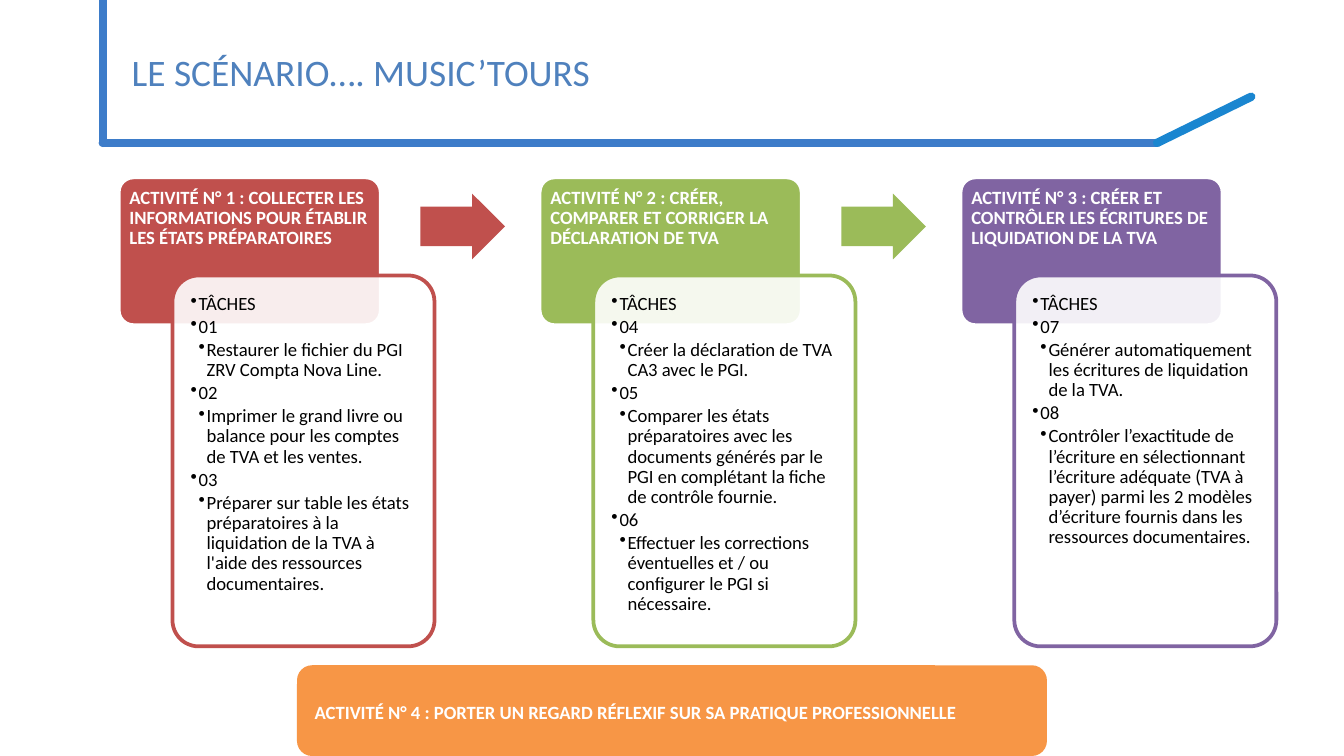
from lxml.etree import SubElement
from pptx import Presentation
from pptx.dml.color import RGBColor
from pptx.enum.shapes import MSO_CONNECTOR as Connector, MSO_SHAPE as Shape
from pptx.enum.text import MSO_ANCHOR as Anchor, MSO_AUTO_SIZE as AutoSize, PP_ALIGN as Align
from pptx.oxml.ns import qn
from pptx.util import Inches, Pt

WHITE = RGBColor(0xFF, 0xFF, 0xFF)
BLACK = RGBColor(0x00, 0x00, 0x00)
TITLE_BLUE = RGBColor(0x4F, 0x81, 0xBD)
FRAME_BLUE = RGBColor(0x3D, 0x7C, 0xC9)
TIP_BLUE = RGBColor(0x1A, 0x86, 0xD0)
RED = RGBColor(0xC0, 0x50, 0x4D)
GREEN = RGBColor(0x9B, 0xBB, 0x59)
PURPLE = RGBColor(0x80, 0x64, 0xA2)
ORANGE = RGBColor(0xF7, 0x96, 0x46)

COLUMNS, ROWS = 100, 56.25
FIRST_COLUMN, COLUMN_STEP = 8.83, 31.32

ACTIVITIES = [
    (RED, "COLLECTER LES INFORMATIONS POUR ÉTABLIR LES ÉTATS PRÉPARATOIRES", [
        ("01", "Restaurer le fichier du PGI ZRV Compta Nova Line."),
        ("02", "Imprimer le grand livre ou balance pour les comptes de TVA et les ventes."),
        ("03", "Préparer sur table les états préparatoires à la liquidation de la TVA "
               "à l'aide des ressources documentaires."),
    ]),
    (GREEN, "CRÉER, COMPARER ET CORRIGER LA DÉCLARATION DE TVA", [
        ("04", "Créer la déclaration de TVA CA3 avec le PGI."),
        ("05", "Comparer les états préparatoires avec les documents générés par le PGI "
               "en complétant la fiche de contrôle fournie."),
        ("06", "Effectuer les corrections éventuelles et / ou configurer le PGI si nécessaire."),
    ]),
    (PURPLE, "CRÉER ET CONTRÔLER LES ÉCRITURES DE LIQUIDATION DE LA TVA", [
        ("07", "Générer automatiquement les écritures de liquidation de la TVA."),
        ("08", "Contrôler l’exactitude de l’écriture en sélectionnant l’écriture adéquate "
               "(TVA à payer) parmi les 2 modèles d’écriture fournis dans les ressources "
               "documentaires."),
    ]),
]


class SlideBuilder:
    font_name = "Calibri"
    text_size = 10
    inset = 0.08

    def __init__(self, deck):
        self.column = deck.slide_width / COLUMNS
        self.row = deck.slide_height / ROWS
        self.slide = deck.slides.add_slide(deck.slide_layouts[5])

    def place(self, left, top, width, height):
        return (round(left * self.column), round(top * self.row),
                round(width * self.column), round(height * self.row))

    def style(self, para, color, size=text_size, bold=False):
        para.alignment = Align.LEFT
        for span in para.runs:
            span.font.name = self.font_name
            span.font.size = Pt(size)
            span.font.bold = bold
            span.font.color.rgb = color

    def title(self, text, *area):
        box = self.slide.shapes.title
        box.left, box.top, box.width, box.height = self.place(*area)
        frame = box.text_frame
        frame.text = text
        frame.auto_size = AutoSize.NONE
        frame.vertical_anchor = Anchor.MIDDLE
        self.style(frame.paragraphs[0], TITLE_BLUE, 20)

    def line(self, start, end, color):
        x1, y1, x2, y2 = self.place(*start, *end)
        connector = self.slide.shapes.add_connector(Connector.STRAIGHT, x1, y1, x2, y2)
        connector.line.color.rgb = color
        connector.line.width = Pt(4.5)
        properties = connector._element.spPr
        properties.find(qn("a:ln")).set("cap", "rnd")
        SubElement(properties, qn("a:effectLst"))

    def shape(self, kind, area, fill, outline=None, adjustments=(), opacity=100):
        shape = self.slide.shapes.add_shape(kind, *self.place(*area))
        shape.shadow.inherit = False
        for index, value in enumerate(adjustments):
            shape.adjustments[index] = value
        shape.fill.solid()
        shape.fill.fore_color.rgb = fill
        if opacity < 100:
            color = shape._element.spPr.find(qn("a:solidFill"))[0]
            SubElement(color, qn("a:alpha")).set("val", str(opacity * 1000))
        if outline is None:
            shape.line.fill.background()
        else:
            shape.line.color.rgb = outline
            shape.line.width = Pt(2)
        return shape

    def text(self, area):
        frame = self.slide.shapes.add_textbox(*self.place(*area)).text_frame
        frame.word_wrap = True
        frame.margin_left = frame.margin_right = Inches(self.inset)
        frame.margin_top = frame.margin_bottom = Inches(self.inset)
        return frame

    def heading(self, frame, text, spacing=0.9):
        frame.text = text
        para = frame.paragraphs[0]
        para.line_spacing = spacing
        self.style(para, WHITE, bold=True)

    def bullets(self, area, items):
        frame = self.text(area)
        frame.text = "\n".join(text for _, text in items)
        for para, (level, _) in zip(frame.paragraphs, items):
            para.level = level
            para.line_spacing = 0.9
            para.space_after = Pt(1.5)
            self.style(para, BLACK)
            properties = para._p.get_or_add_pPr()
            properties.set("marL", str(Inches(0.06 * level)))
            properties.set("indent", str(Inches(-0.06)))
            SubElement(properties, qn("a:buChar")).set("char", "•")

    def activity(self, left, number, color, name, tasks):
        self.shape(Shape.ROUNDED_RECTANGLE, (left, 13.2, 19.5, 11), color, WHITE, [0.1])
        self.heading(self.text((left, 13.2, 19.5, 7.4)), f"ACTIVITÉ N° {number} : {name}")
        self.shape(Shape.ROUNDED_RECTANGLE, (left + 4, 20.5, 19.5, 27.6),
                   WHITE, color, [0.1], opacity=90)
        items = [(1, "TÂCHES")]
        for code, task in tasks:
            items += [(1, code), (2, task)]
        self.bullets((left + 4.55, 21.1, 18.4, 26.5), items)

    def arrow(self, left, color):
        self.shape(Shape.RIGHT_ARROW, (left, 14.4, 6.3, 4.9), color, adjustments=[0.6, 0.5])

    def banner(self, area, text):
        frame = self.shape(Shape.ROUNDED_RECTANGLE, area, ORANGE).text_frame
        frame.word_wrap = True
        frame.vertical_anchor = Anchor.MIDDLE
        self.heading(frame, text, 1.15)


def main():
    deck = Presentation()
    deck.slide_width = Inches(10)
    deck.slide_height = deck.slide_width * 9 // 16
    page = SlideBuilder(deck)

    corner, bend = (7.65, 10.63), (86.1, 10.63)
    page.line(corner, bend, FRAME_BLUE)
    page.line(bend, (93.1, 7.2), TIP_BLUE)
    page.line(corner, (7.65, 0), FRAME_BLUE)
    page.title("LE SCÉNARIO…. MUSIC’TOURS", 8.8, 0, 86.2, 10.6)

    for index, (color, name, tasks) in enumerate(ACTIVITIES):
        left = FIRST_COLUMN + index * COLUMN_STEP
        page.activity(left, index + 1, color, name, tasks)
        if index < len(ACTIVITIES) - 1:
            page.arrow(left + 22.45, color)

    page.banner((22.1, 49.5, 55.8, 6.75),
                "ACTIVITÉ N° 4 : PORTER UN REGARD RÉFLEXIF SUR SA PRATIQUE PROFESSIONNELLE")
    deck.save("out.pptx")


if __name__ == "__main__":
    main()
